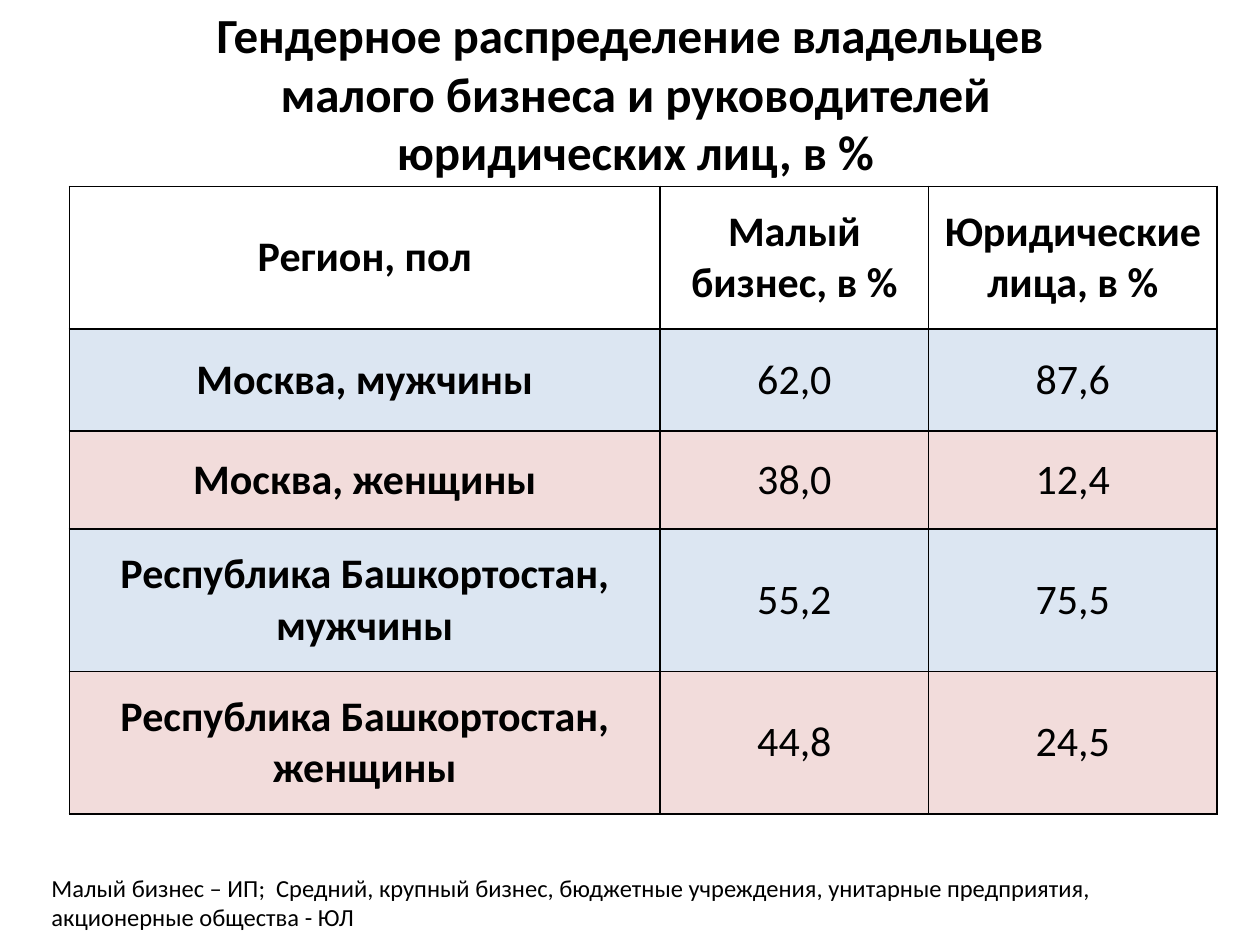
from lxml.etree import SubElement
from pptx import Presentation
from pptx.dml.color import RGBColor
from pptx.enum.text import MSO_ANCHOR, PP_ALIGN
from pptx.oxml.ns import qn
from pptx.util import Inches, Pt

COLORS = {"text": "000000", "line": "000000", "head": "FFFFFF",
          "men": "DCE6F2", "women": "F2DCDB"}

TITLE = ("Гендерное распределение владельцев\n"
         " малого бизнеса и руководителей\n"
         " юридических лиц, в %")
NOTE = ("Малый бизнес – ИП;  Средний, крупный бизнес, бюджетные учреждения, "
        "унитарные предприятия, акционерные общества - ЮЛ")

COLS = [4.69, 2.13, 2.29]
ROWS = [
    (1.13, "head", ["Регион, пол", "Малый бизнес, в %", "Юридические лица, в %"]),
    (0.81, "men", ["Москва, мужчины", "62,0", "87,6"]),
    (0.78, "women", ["Москва, женщины", "38,0", "12,4"]),
    (1.13, "men", ["Республика Башкортостан, мужчины", "55,2", "75,5"]),
    (1.13, "women", ["Республика Башкортостан, женщины", "44,8", "24,5"]),
]


def write(frame, text, size, bold=False, align=PP_ALIGN.CENTER):
    para = frame.paragraphs[0]
    para.text = text
    para.alignment = align
    style = {"name": "Calibri", "size": Pt(size), "bold": bold}
    for run in para.runs:
        for key, value in style.items():
            setattr(run.font, key, value)
        run.font.color.rgb = RGBColor.from_string(COLORS["text"])


def add_text(slide, box, text, size, anchor, **style):
    frame = slide.shapes.add_textbox(*map(Inches, box)).text_frame
    for key, value in {"word_wrap": True, "vertical_anchor": anchor}.items():
        setattr(frame, key, value)
    write(frame, text, size, **style)


def add_edges(cell):
    props = cell._tc.get_or_add_tcPr()
    for spot, side in enumerate(("lnL", "lnR", "lnT", "lnB")):
        line = props.makeelement(qn(f"a:{side}"), {"w": str(Pt(1))})
        props.insert(spot, line)
        fill = SubElement(line, qn("a:solidFill"))
        SubElement(fill, qn("a:srgbClr"), val=COLORS["line"])


def fill_cell(cell, text, tint, bold):
    cell.vertical_anchor = MSO_ANCHOR.MIDDLE
    cell.fill.solid()
    cell.fill.fore_color.rgb = RGBColor.from_string(COLORS[tint])
    write(cell.text_frame, text, 24, bold)
    add_edges(cell)


def add_grid(slide, left, top):
    size = [Inches(sum(COLS)), Inches(sum(row[0] for row in ROWS))]
    table = slide.shapes.add_table(
        len(ROWS), len(COLS), Inches(left), Inches(top), *size).table
    for key, value in {"first_row": False, "horz_banding": False}.items():
        setattr(table, key, value)
    for col, width in zip(table.columns, COLS):
        col.width = Inches(width)
    for r, (height, tint, texts) in enumerate(ROWS):
        table.rows[r].height = Inches(height)
        for c, text in enumerate(texts):
            fill_cell(table.cell(r, c), text, tint, r == 0 or c == 0)


def main():
    deck = Presentation()
    deck.slide_width, deck.slide_height = Inches(10), Inches(7.5)
    slide = deck.slides.add_slide(deck.slide_layouts[6])
    add_text(slide, (0.5, 0.3, 9, 0.87), TITLE, 28, MSO_ANCHOR.MIDDLE, bold=True)
    add_grid(slide, 0.55, 1.48)
    add_text(slide, (0.31, 6.88, 9.22, 0.57), NOTE, 14, MSO_ANCHOR.TOP,
             align=PP_ALIGN.LEFT)
    deck.save("out.pptx")


if __name__ == "__main__":
    main()
